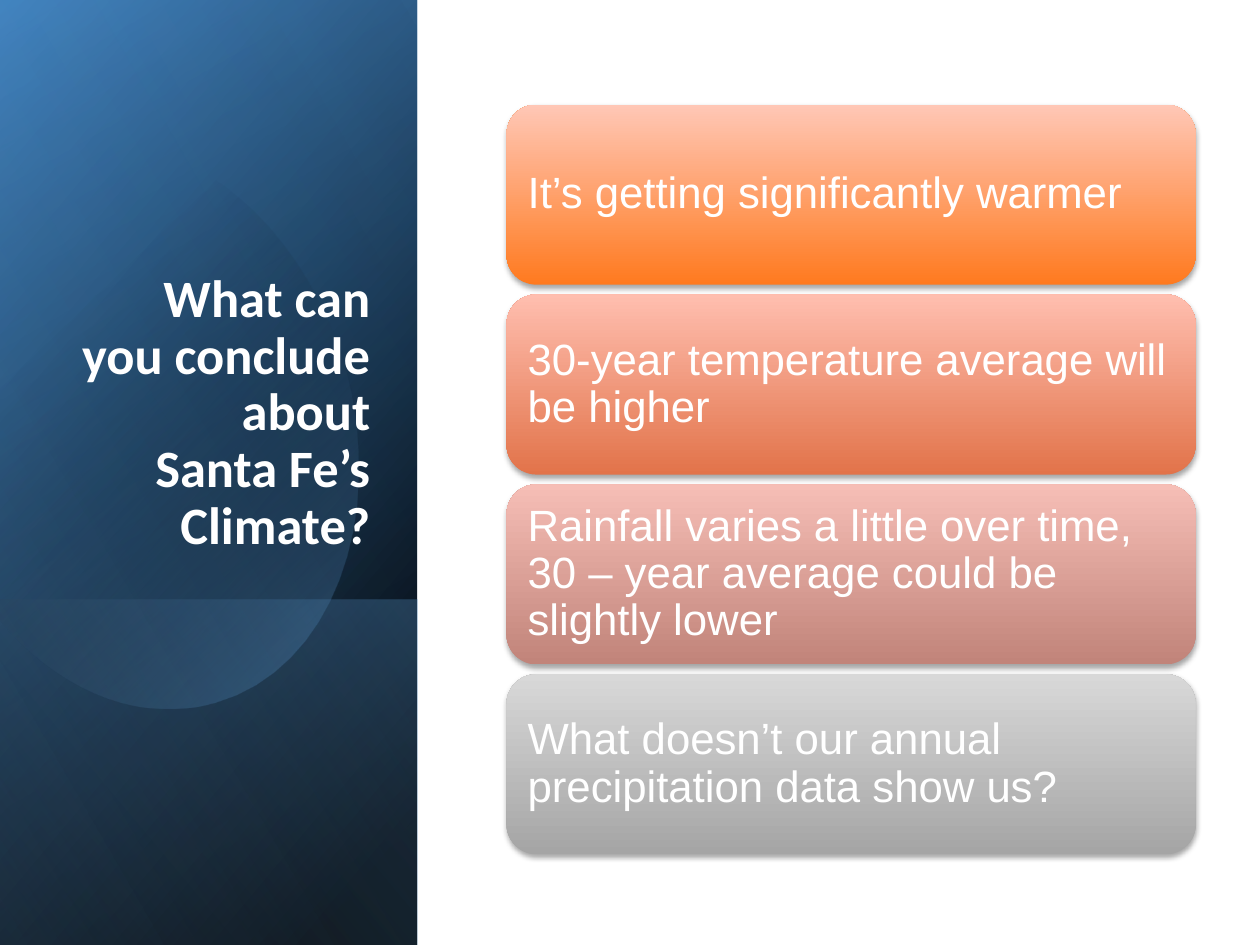
from dataclasses import dataclass

from pptx import Presentation, util as u
from pptx.dml.color import RGBColor
from pptx.enum import shapes as shape_kinds, text as text_kinds
from pptx.oxml import ns, parse_xml

WIDTH, HEIGHT = 10, 7.5
PANEL_WIDTH = 0.331 * WIDTH
CURVE_STEPS = 16


@dataclass(frozen=True)
class Theme:
    white: str = "FFFFFF"
    black: str = "000000"
    blue: str = "5B9BD5"
    deep_blue: str = "2E75B6"
    pale_blue: str = "9DC3E6"
    title_font: str = "Calibri"
    body_font: str = "Arial"
    title_size: int = 30
    body_size: int = 25
    line_spacing: float = 0.9


@dataclass(frozen=True)
class Stop:
    position: int
    color: str
    alpha: int = 100


@dataclass(frozen=True)
class Panel:
    top: float
    angle: int
    stops: tuple[Stop, Stop]


@dataclass(frozen=True)
class Card:
    text: str
    bottom_color: str
    top_color: str


@dataclass(frozen=True)
class CardGrid:
    left: float = 4.02
    top: float = 0.83
    width: float = 5.47
    height: float = 1.43
    pitch: float = 1.507


THEME = Theme()
GRID = CardGrid()

BASE_PANELS = (
    Panel(0, 50, (Stop(8, THEME.black), Stop(100, THEME.deep_blue))),
    Panel(0, 30, (Stop(0, THEME.black, 0), Stop(99, THEME.blue, 46))),
    Panel(4.76, 130, (Stop(2, THEME.blue, 29), Stop(100, THEME.black, 30))),
)
TOP_PANEL = Panel(0, 120, (Stop(0, THEME.black, 0), Stop(99, THEME.pale_blue, 11)))

# Oval outline: each segment holds one end point, or two controls and an end
OVAL_START = (0.96, 1.14)
OVAL_SEGMENTS = (
    ((1.71, 1.22), (2.44, 1.92), (2.73, 2.9)),
    ((3.07, 4.12), (2.62, 5.31), (1.71, 5.57)),
    ((1.14, 5.74), (0.53, 5.5), (0.07, 5)),
    ((-0.03, 4.88),),
    ((-0.25, 1.66),),
    ((-0.15, 1.54),),
    ((0.02, 1.37), (0.22, 1.25), (0.45, 1.18)),
    ((0.62, 1.13), (0.79, 1.12), OVAL_START),
)
OVAL_STOPS = (Stop(29, THEME.black, 0), Stop(100, THEME.blue, 43))

TITLE_LINES = ("What can you conclude about", "Santa Fe’s Climate?")
CARDS = (
    Card("It’s getting significantly warmer", "FF7A1F", "FFC7B6"),
    Card("30-year temperature average will be higher", "E2734A", "FFBEAF"),
    Card("Rainfall varies a little over time, 30 – year average could be slightly lower",
         "C1847A", "F6BEB6"),
    Card("What doesn’t our annual precipitation data show us?", "A5A5A5", "D8D8D8"),
)


def color_xml(color: str, alpha: int) -> str:
    return f'<a:srgbClr val="{color}"><a:alpha val="{alpha * 1000}"/></a:srgbClr>'


def paint(shape, angle: int, stops: tuple[Stop, ...]) -> None:
    """Give the shape a linear gradient, no outline and no shadow."""
    shape.shadow.inherit = False
    shape.line.fill.background()
    shape.fill.background()
    stop_xml = "".join(
        f'<a:gs pos="{stop.position * 1000}">{color_xml(stop.color, stop.alpha)}</a:gs>'
        for stop in stops)
    gradient = parse_xml(
        f'<a:gradFill {ns.nsdecls("a")} rotWithShape="1"><a:gsLst>{stop_xml}</a:gsLst>'
        f'<a:lin ang="{angle * 60000}" scaled="0"/></a:gradFill>')
    properties = shape._element.spPr
    properties.replace(properties.find(ns.qn("a:noFill")), gradient)


def add_panel(page, panel: Panel) -> None:
    """Draw a panel from its top to the slide's foot, turned a quarter and mirrored."""
    length = HEIGHT - panel.top
    left = (PANEL_WIDTH - length) / 2
    top = panel.top + (length - PANEL_WIDTH) / 2
    box = page.shapes.add_shape(
        shape_kinds.MSO_SHAPE.RECTANGLE,
        *map(u.Inches, (left, top, length, PANEL_WIDTH)))
    box.rotation = 90
    box._element.spPr.xfrm.set("flipH", "1")
    paint(box, panel.angle, panel.stops)


def oval_points() -> list[tuple[int, int]]:
    """Turn the oval's curves into short straight steps."""
    points, here = [], OVAL_START
    for segment in OVAL_SEGMENTS:
        if len(segment) == 1:
            points.append(segment[0])
        else:
            corners = (here, *segment)
            for step in range(1, CURVE_STEPS + 1):
                t = step / CURVE_STEPS
                weights = ((1 - t) ** 3, 3 * t * (1 - t) ** 2, 3 * t * t * (1 - t), t ** 3)
                points.append(tuple(
                    sum(weight * corner[axis] for weight, corner in zip(weights, corners))
                    for axis in (0, 1)))
        here = segment[-1]
    return [(u.Inches(x), u.Inches(y)) for x, y in points]


def add_oval(page) -> None:
    builder = page.shapes.build_freeform(*map(u.Inches, OVAL_START))
    builder.add_line_segments(oval_points(), close=True)
    paint(builder.convert_to_shape(), 46, OVAL_STOPS)


def style_span(span, font: str, size: int, bold: bool) -> None:
    span.font.name, span.font.size, span.font.bold = font, u.Pt(size), bold
    span.font.color.rgb = RGBColor.from_string(THEME.white)


def place_title(page) -> None:
    title = page.shapes.title
    title.left, title.top, title.width, title.height = map(u.Inches, (0.48, 1.84, 2.56, 2.62))
    page.shapes._spTree.append(title._element)  # in front of the panels
    frame = title.text_frame
    frame.word_wrap = True
    frame.auto_size = text_kinds.MSO_AUTO_SIZE.NONE
    frame.vertical_anchor = text_kinds.MSO_ANCHOR.BOTTOM
    para = frame.paragraphs[0]
    para.alignment = text_kinds.PP_ALIGN.RIGHT
    para.line_spacing = THEME.line_spacing
    for index, line in enumerate(TITLE_LINES):
        if index:
            para.add_line_break()
        span = para.add_run()
        span.text = line
        style_span(span, THEME.title_font, THEME.title_size, True)


def add_card(page, row: int, card: Card) -> None:
    box = page.shapes.add_shape(
        shape_kinds.MSO_SHAPE.ROUNDED_RECTANGLE,
        *map(u.Inches, (GRID.left, GRID.top + row * GRID.pitch, GRID.width, GRID.height)))
    paint(box, 270, (Stop(0, card.bottom_color), Stop(100, card.top_color)))
    box._element.spPr.find(ns.qn("a:effectLst")).append(parse_xml(
        f'<a:outerShdw {ns.nsdecls("a")} blurRad="{u.Pt(3.1)}" dist="{u.Pt(1.8)}" '
        f'dir="5400000" rotWithShape="0">{color_xml(THEME.black, 35)}</a:outerShdw>'))
    frame = box.text_frame
    frame.word_wrap = True
    frame.vertical_anchor = text_kinds.MSO_ANCHOR.MIDDLE
    frame.margin_left = frame.margin_right = u.Inches(0.1)
    frame.margin_top = frame.margin_bottom = u.Inches(0.1)
    para = frame.paragraphs[0]
    para.alignment = text_kinds.PP_ALIGN.LEFT
    para.line_spacing = THEME.line_spacing
    span = para.add_run()
    span.text = card.text
    style_span(span, THEME.body_font, THEME.body_size, False)


def main() -> None:
    deck = Presentation()
    deck.slide_width, deck.slide_height = u.Inches(WIDTH), u.Inches(HEIGHT)
    page = deck.slides.add_slide(deck.slide_layouts.get_by_name("Title Only"))
    # Blue side panel
    for panel in BASE_PANELS:
        add_panel(page, panel)
    add_oval(page)
    add_panel(page, TOP_PANEL)
    # Title and conclusions
    place_title(page)
    for row, card in enumerate(CARDS):
        add_card(page, row, card)
    deck.save("out.pptx")


if __name__ == "__main__":
    main()
